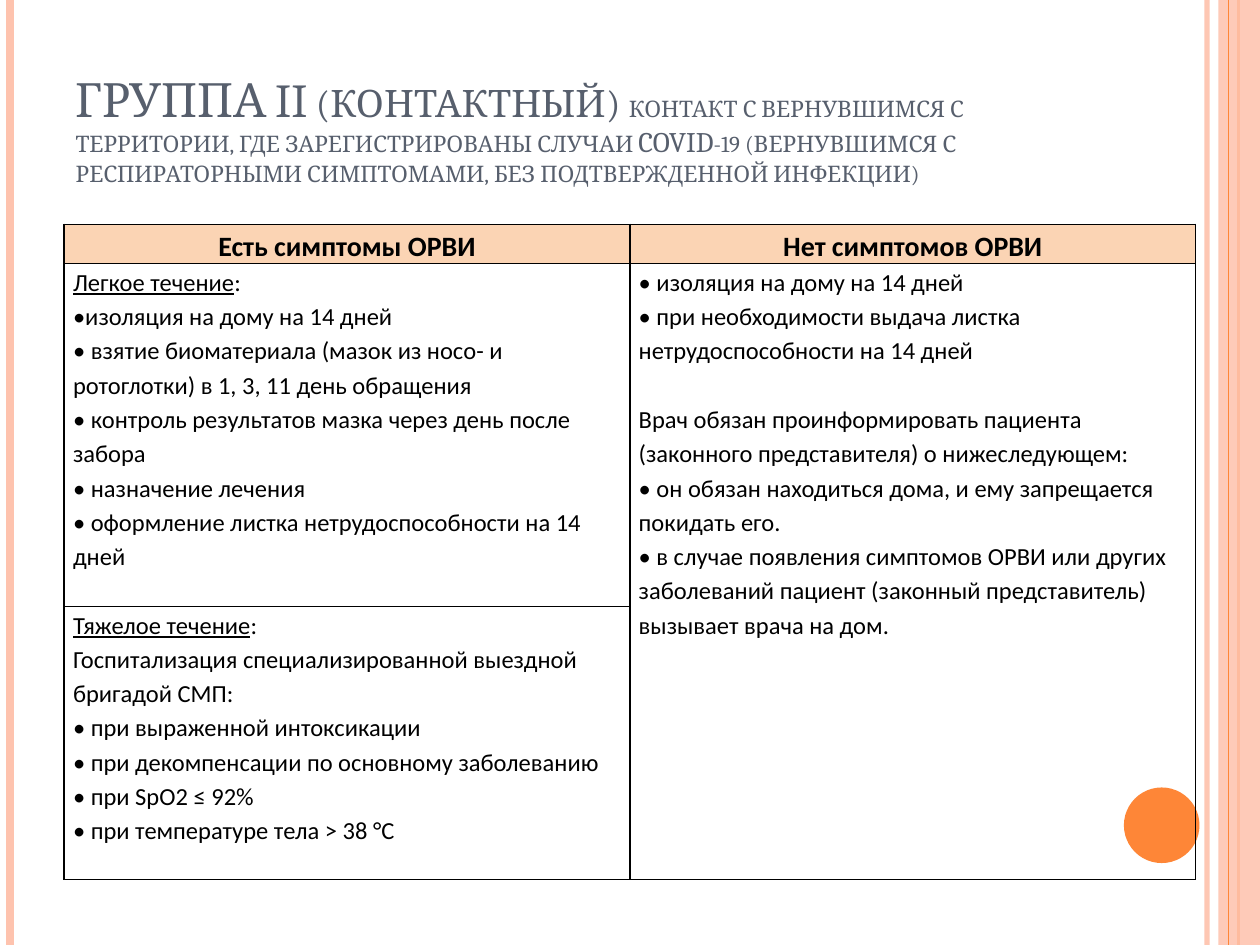
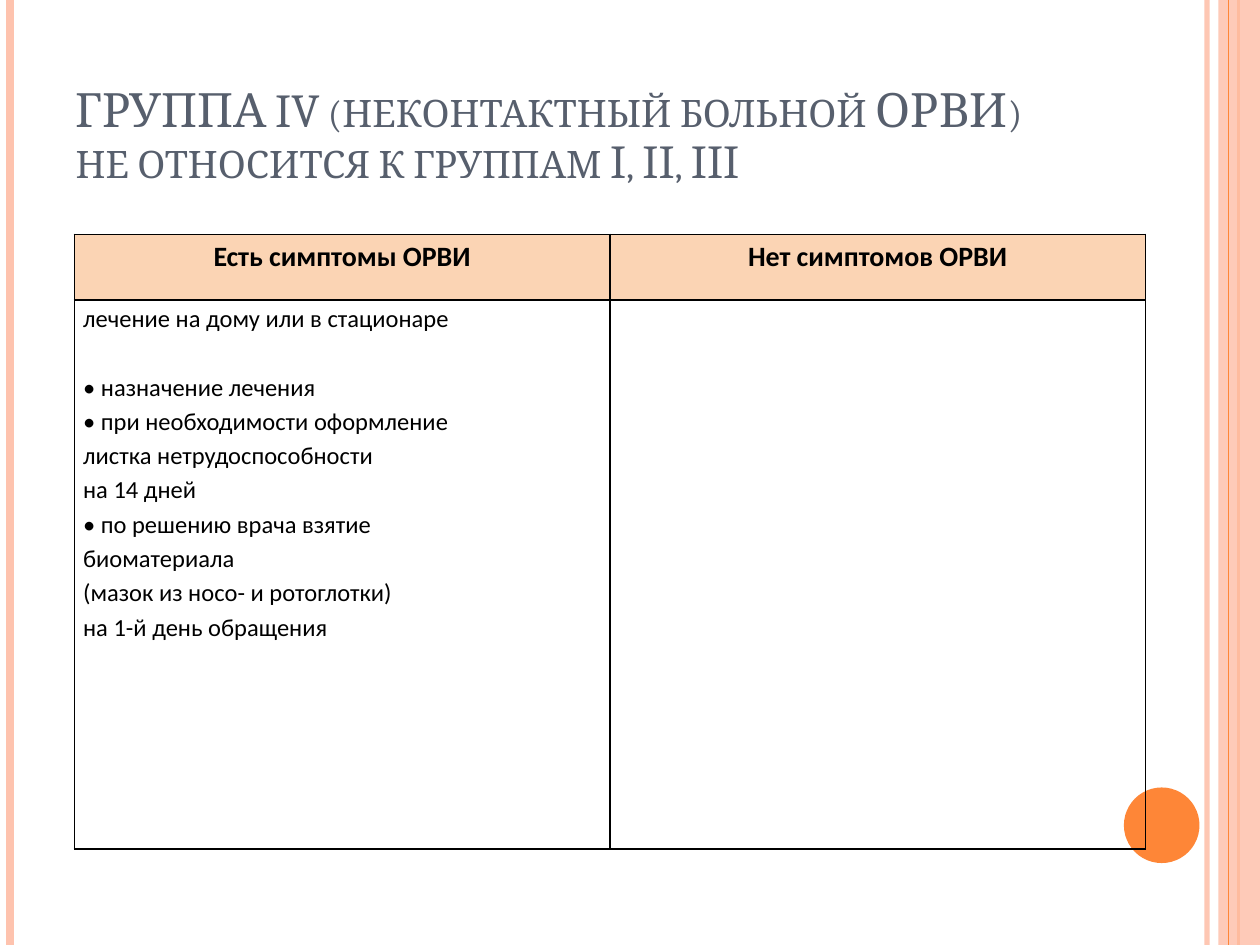
from dataclasses import dataclass

from lxml.etree import SubElement
from pptx import Presentation
from pptx.dml.color import RGBColor
from pptx.enum.shapes import MSO_CONNECTOR, MSO_SHAPE
from pptx.enum.text import MSO_ANCHOR, MSO_AUTO_SIZE, PP_ALIGN
from pptx.oxml.ns import qn
from pptx.util import Inches, Pt

COLORS = {
    "title": "575F6D",
    "text": "000000",
    "border": "000000",
    "header": "FBD4B4",
    "stripe": "FEC3AE",
    "accent": "FE8637",
}
TITLE_FONT = "Cambria"
TABLE_FONT = "Calibri"
UNIT = Inches(0.1)
COLUMNS, ROWS = 100, 75
TITLE_LAYOUT = 5
HEADERS = ("Есть симптомы ОРВИ", "Нет симптомов ОРВИ")


@dataclass
class Box:
    left: float
    top: float
    width: float
    height: float

    def lengths(self):
        return [round(value * UNIT) for value in (self.left, self.top, self.width, self.height)]


@dataclass
class Line:
    text: str
    underlined: str = ""
    gap: float = 0


def rgb(name):
    return RGBColor.from_string(COLORS[name])


def set_opacity(shape, percent):
    for color in shape.element.spPr.iter(qn("a:srgbClr")):
        SubElement(color, qn("a:alpha")).set("val", str(percent * 1000))


def add_filled_shape(slide, kind, box, color):
    shape = slide.shapes.add_shape(kind, *box.lengths())
    shape.shadow.inherit = False
    shape.fill.solid()
    shape.fill.fore_color.rgb = rgb(color)
    shape.line.fill.background()
    return shape


def add_stripe(slide, column, color, width):
    x = round(column * UNIT)
    stripe = slide.shapes.add_connector(MSO_CONNECTOR.STRAIGHT, x, 0, x, ROWS * UNIT)
    stripe.line.color.rgb = rgb(color)
    stripe.line.width = Pt(width)
    SubElement(stripe.element.spPr, qn("a:effectLst"))
    return stripe


def move_bands_to_layout(slide, box):
    right = box.left + box.width
    inner_stripe = add_stripe(slide, right - 4.2, "stripe", 3)
    set_opacity(inner_stripe, 93)
    left_stripe = add_stripe(slide, box.left + 0.8, "stripe", 4.5)
    thick_stripe = add_stripe(slide, right - 1.7, "accent", 1.5)
    band = add_filled_shape(
        slide, MSO_SHAPE.RECTANGLE, Box(right - 3.3, box.top, 3.3, box.height), "stripe")
    set_opacity(band, 87)
    thin_stripe = add_stripe(slide, right - 2.5, "accent", 0.75)
    circle = add_filled_shape(
        slide, MSO_SHAPE.OVAL, Box(right - 10.8, box.top + 62.5, 6, 6), "accent")
    layout_tree = slide.slide_layout.shapes.element
    for shape in (inner_stripe, left_stripe, thick_stripe, band, thin_stripe, circle):
        layout_tree.append(shape.element)


def fill_title(slide, box, parts):
    title = slide.shapes.title
    title.left, title.top, title.width, title.height = box.lengths()
    frame = title.text_frame
    frame.auto_size = MSO_AUTO_SIZE.NONE
    frame.word_wrap = True
    frame.vertical_anchor = MSO_ANCHOR.BOTTOM
    paragraph = frame.paragraphs[0]
    paragraph.alignment = PP_ALIGN.LEFT
    paragraph.line_spacing = 0.9
    for text, size in parts:
        run = paragraph.add_run()
        run.text = text
        run.font.size = Pt(size)
        run.font.name = TITLE_FONT
        run.font.color.rgb = rgb("title")
        run._r.get_or_add_rPr().set("cap", "small")


def add_borders(cell):
    properties = cell._tc.get_or_add_tcPr()
    for index, side in enumerate(("lnL", "lnR", "lnT", "lnB")):
        border = properties.makeelement(qn(f"a:{side}"), {"w": str(Pt(1))})
        fill = SubElement(border, qn("a:solidFill"))
        SubElement(fill, qn("a:srgbClr")).set("val", COLORS["border"])
        properties.insert(index, border)


def format_cell(cell, is_header):
    cell.margin_left = cell.margin_right = Inches(0.07)
    cell.margin_top = cell.margin_bottom = 0
    if is_header:
        cell.fill.solid()
        cell.fill.fore_color.rgb = rgb("header")
    else:
        cell.fill.background()
    add_borders(cell)


def write_cell(cell, lines, is_header):
    for index, line in enumerate(lines):
        if isinstance(line, str):
            line = Line(line)
        frame = cell.text_frame
        paragraph = frame.add_paragraph() if index else frame.paragraphs[0]
        paragraph.alignment = PP_ALIGN.CENTER if is_header else PP_ALIGN.LEFT
        paragraph.line_spacing = 1.15
        paragraph.space_before = Pt(line.gap)
        font = paragraph.font
        font.name = TABLE_FONT
        font.size = Pt(16 if is_header else 14)
        font.bold = is_header
        font.color.rgb = rgb("text")
        if line.underlined:
            run = paragraph.add_run()
            run.text = line.underlined
            run.font.underline = True
        paragraph.add_run().text = line.text


def add_symptom_table(slide, box, row_heights, body):
    table = slide.shapes.add_table(len(row_heights), len(HEADERS), *box.lengths()).table
    table.first_row = table.horz_banding = False
    for column in table.columns:
        column.width = round(box.width * UNIT / len(HEADERS))
    for row, height in zip(table.rows, row_heights):
        row.height = round(height * UNIT)
    content = [[[header] for header in HEADERS], *body]
    for row_index, row_content in enumerate(content):
        for column_index, lines in enumerate(row_content):
            cell = table.cell(row_index, column_index)
            format_cell(cell, row_index == 0)
            write_cell(cell, lines, row_index == 0)
    return table


def add_group_slide(presentation, title_parts):
    slide = presentation.slides.add_slide(presentation.slide_layouts[TITLE_LAYOUT])
    fill_title(slide, Box(5, 3, 81.7, 12.5), title_parts)
    return slide


def add_contact_slide(presentation):
    slide = add_group_slide(presentation, [
        ("ГРУППА II (контактный) ", 27),
        ("контакт с вернувшимся с территории, где зарегистрированы случаи COVID-19 "
         "(вернувшимся с респираторными симптомами, без подтвержденной инфекции)", 16.2),
    ])
    mild = [
        Line(":", underlined="Легкое течение"),
        "•изоляция на дому на 14 дней",
        "• взятие биоматериала (мазок из носо- и ротоглотки) в 1, 3, 11 день обращения",
        "• контроль результатов мазка через день после забора",
        "• назначение лечения",
        "• оформление листка нетрудоспособности на 14 дней",
    ]
    severe = [
        Line(":", underlined="Тяжелое течение"),
        "Госпитализация специализированной выездной бригадой СМП:",
        "• при выраженной интоксикации",
        "• при декомпенсации по основному заболеванию",
        "• при SpO2 ≤ 92%",
        "• при температуре тела > 38 °C",
    ]
    no_symptoms = [
        "• изоляция на дому на 14 дней",
        "• при необходимости выдача листка нетрудоспособности на 14 дней",
        Line("Врач обязан проинформировать пациента (законного представителя) "
             "о нижеследующем:", gap=19.6),
        "• он обязан находиться дома, и ему запрещается покидать его.",
        "• в случае появления симптомов ОРВИ или других заболеваний пациент "
        "(законный представитель) вызывает врача на дом.",
    ]
    table = add_symptom_table(
        slide, Box(5.1, 17.8, 89.8, 52), (3.1, 27.2, 21.7),
        [[mild, no_symptoms], [severe, []]])
    table.cell(1, 1).merge(table.cell(2, 1))
    return slide


def add_no_contact_slide(presentation):
    slide = add_group_slide(presentation, [
        ("ГРУППА IV (неконтактный больной ОРВИ) не относится к группам I, II, III", 27),
    ])
    symptoms = [
        "лечение на дому или в стационаре",
        Line("• назначение лечения", gap=19.6),
        "• при необходимости оформление",
        "листка нетрудоспособности",
        "на 14 дней",
        "• по решению врача взятие",
        "биоматериала",
        "(мазок из носо- и ротоглотки)",
        "на 1-й день обращения",
    ]
    add_symptom_table(slide, Box(5.9, 18.6, 85, 48.8), (5.2, 43.6), [[symptoms, []]])


def main():
    presentation = Presentation()
    presentation.slide_width = COLUMNS * UNIT
    presentation.slide_height = ROWS * UNIT
    contact_slide = add_contact_slide(presentation)
    move_bands_to_layout(contact_slide, Box(0, 0, COLUMNS, ROWS))
    add_no_contact_slide(presentation)
    presentation.save("out.pptx")


if __name__ == "__main__":
    main()
